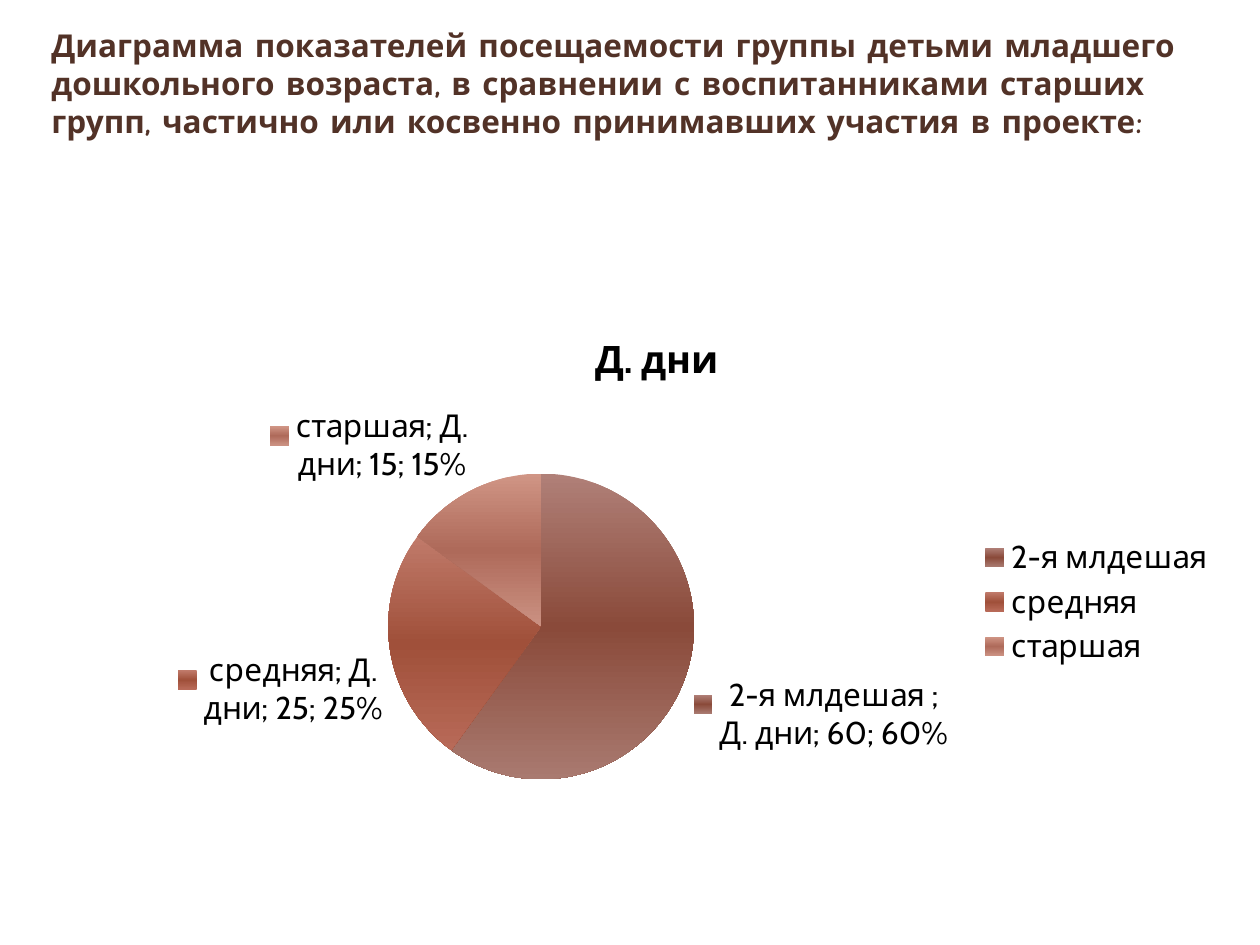
from copy import deepcopy

from lxml import etree
from pptx import Presentation
from pptx.chart.data import CategoryChartData
from pptx.dml.color import RGBColor
from pptx.enum.chart import XL_CHART_TYPE, XL_LABEL_POSITION, XL_LEGEND_POSITION
from pptx.enum.text import MSO_AUTO_SIZE
from pptx.oxml.ns import qn
from pptx.util import Emu, Pt

EMU_PER_PX = 914400 / 126
COLORS = {"heading": "523227", "chart_text": "000000"}
HEADING = (
    "Диаграмма показателей посещаемости группы детьми младшего "
    "дошкольного возраста, в сравнении с воспитанниками старших групп, "
    "частично или косвенно принимавших участия в проекте:"
)
# Age group, days attended, gradient from top through middle to bottom
GROUPS = [
    ("2-я млдешая ", 60, ("B08078", "8A4A3A", "A97A70")),
    ("средняя", 25, ("C07A6A", "A0503A", "B86A58")),
    ("старшая", 15, ("D09585", "AE6A5A", "CB9182")),
]


def px(length):
    return Emu(round(length * EMU_PER_PX))


def rgb(name):
    return RGBColor.from_string(COLORS[name])


def set_font(font, family, size, color, bold=False):
    font.name = family
    font.size = Pt(size)
    font.bold = bold
    font.color.rgb = rgb(color)


def add_heading(slide, left, top, width, height):
    heading = slide.shapes.add_textbox(px(left), px(top), px(width), px(height))
    frame = heading.text_frame
    frame.word_wrap = True
    frame.auto_size = MSO_AUTO_SIZE.SHAPE_TO_FIT_TEXT
    paragraph = frame.paragraphs[0]
    paragraph.text = HEADING
    set_font(paragraph.font, "Comic Neue", 18, "heading", bold=True)


def shade(fill, gradient):
    fill.gradient()
    fill.gradient_angle = 270
    stop_list = fill._fill._gradFill.find(qn("a:gsLst"))
    stop_list.insert(1, deepcopy(stop_list[0]))
    for stop, position, color in zip(fill.gradient_stops, (0, 0.5, 1), gradient):
        stop.position = position
        stop.color.rgb = RGBColor.from_string(color)


def place(part, layout_index, **fractions):
    """Fix a chart part at fractions of the chart's size."""
    layout = part.find(qn("c:layout"))
    if layout is not None:
        part.remove(layout)
    layout = etree.Element(qn("c:layout"))
    part.insert(layout_index, layout)
    manual = etree.SubElement(layout, qn("c:manualLayout"))
    settings = {"xMode": "edge", "yMode": "edge", **fractions}
    if "w" in fractions:
        settings = {"layoutTarget": "inner", **settings}
    for tag, value in settings.items():
        etree.SubElement(manual, qn(f"c:{tag}")).set("val", str(value))


def label_slices(plot):
    plot.has_data_labels = True
    labels = plot.data_labels
    labels.show_legend_key = True
    labels.show_category_name = True
    labels.show_series_name = True
    labels.show_value = True
    labels.show_percentage = True
    labels.position = XL_LABEL_POSITION.OUTSIDE_END
    set_font(labels.font, "Cabin", 18, "chart_text")
    separator = etree.Element(qn("c:separator"))
    separator.text = "; "
    labels._element.find(qn("c:showBubbleSize")).addnext(separator)


def add_attendance_pie(slide, left, top, width, height):
    attendance = CategoryChartData()
    attendance.categories = [name for name, _, _ in GROUPS]
    attendance.add_series("Д. дни", [days for _, days, _ in GROUPS])
    chart = slide.shapes.add_chart(
        XL_CHART_TYPE.PIE, px(left), px(top), px(width), px(height), attendance
    ).chart
    set_font(chart.font, "Cabin", 18, "chart_text")

    # Title
    chart.has_title = True
    title = chart.chart_title
    title.text_frame.text = "Д. дни"
    set_font(title.text_frame.paragraphs[0].font, "Cabin", 21.6, "chart_text", bold=True)
    place(title._element, 1, x=0.45, y=0.05)

    # Legend
    chart.has_legend = True
    chart.legend.position = XL_LEGEND_POSITION.RIGHT
    chart.legend.include_in_layout = False
    set_font(chart.legend.font, "Cabin", 18, "chart_text")

    # Slices
    plot = chart.plots[0]
    plot.vary_by_categories = True
    for index, (_, _, gradient) in enumerate(GROUPS):
        shade(plot.series[0].points[index].format.fill, gradient)
    label_slices(plot)
    place(chart._chartSpace.chart.plotArea, 0, x=0.28, y=0.29, w=0.26, h=0.5)


def main():
    presentation = Presentation()
    presentation.slide_width = px(1260)
    presentation.slide_height = px(945)
    slide = presentation.slides.add_slide(presentation.slide_layouts[6])
    add_attendance_pie(slide, 59, 295, 1176, 614)
    add_heading(slide, 39, 20, 1182, 127)
    presentation.save("out.pptx")


if __name__ == "__main__":
    main()
